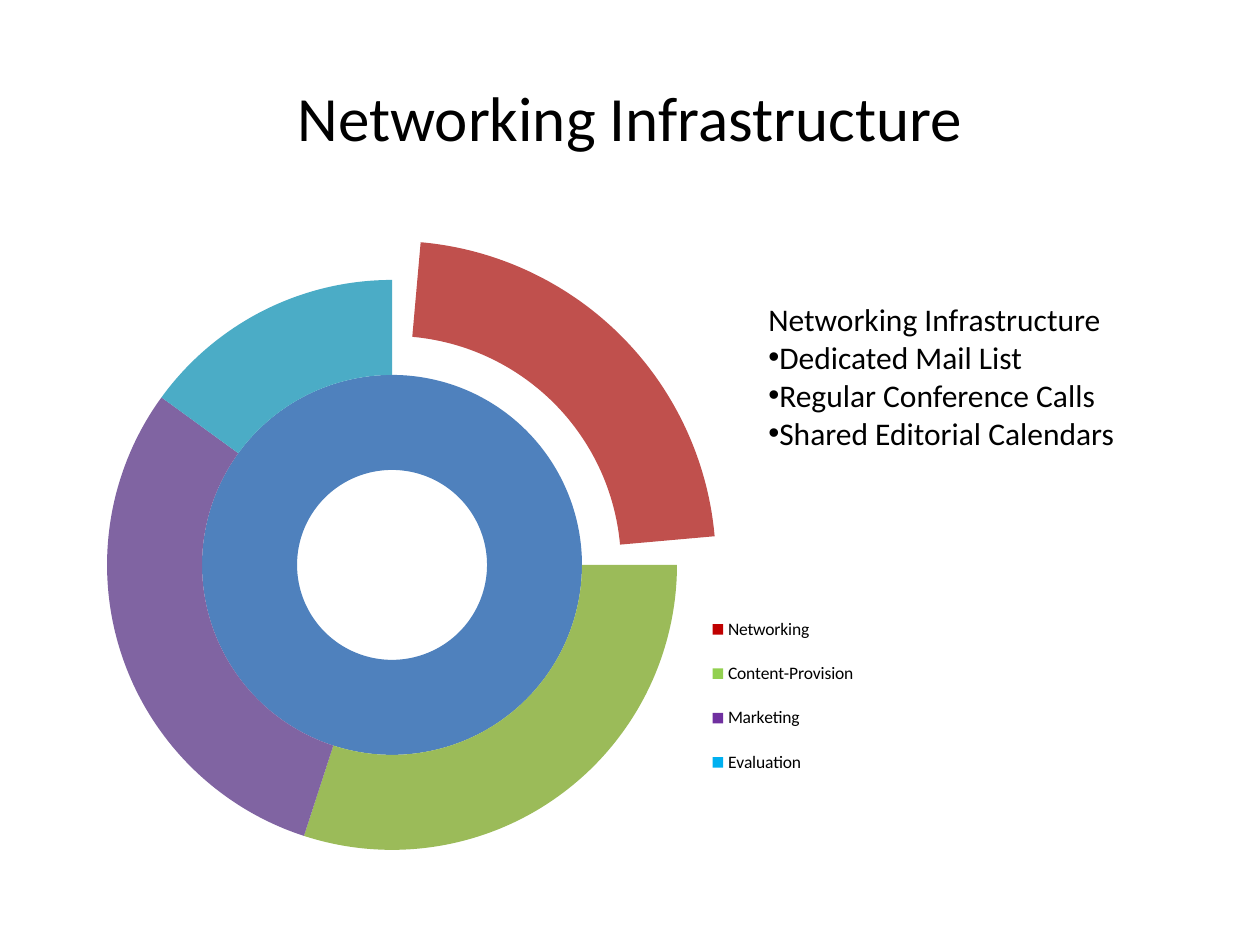
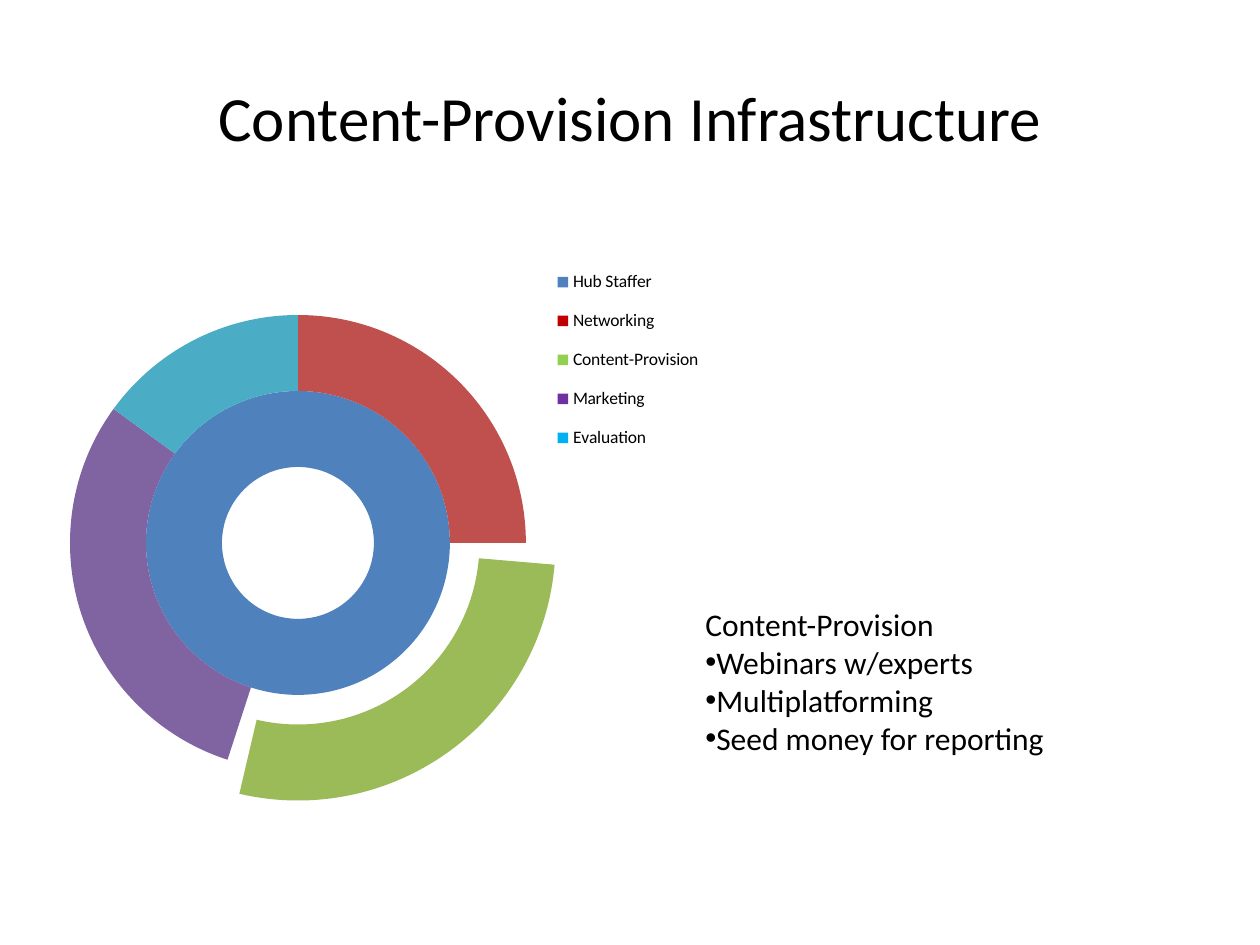
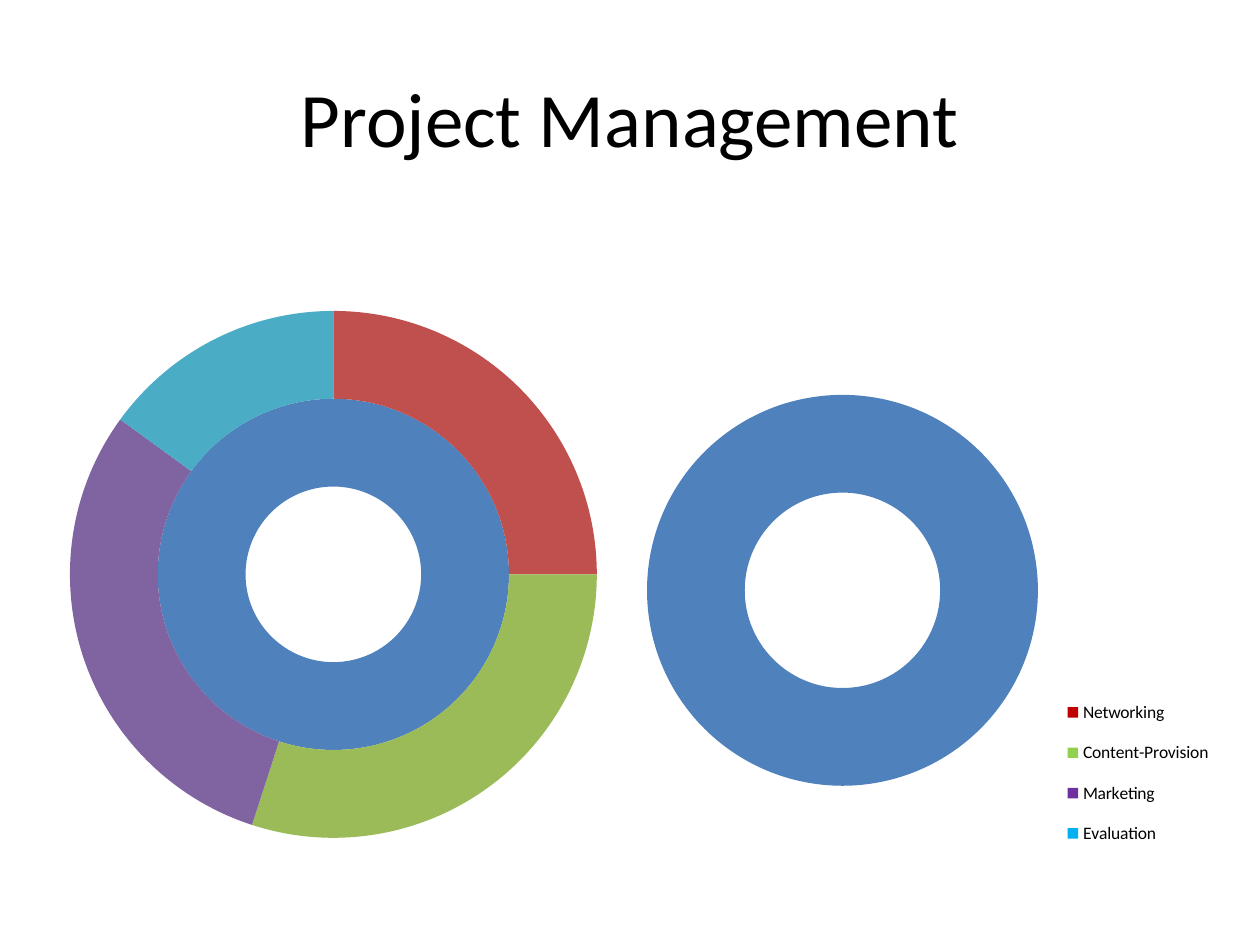
from lxml.etree import SubElement
from pptx import Presentation
from pptx.chart.data import CategoryChartData
from pptx.dml.color import RGBColor
from pptx.enum.chart import XL_CHART_TYPE, XL_LEGEND_POSITION
from pptx.enum.text import MSO_ANCHOR, MSO_AUTO_SIZE, PP_ALIGN
from pptx.oxml.ns import qn
from pptx.util import Inches, Pt

PIXELS_PER_INCH = 126
FONT = "Calibri"
BLACK = RGBColor(0x00, 0x00, 0x00)
BLUE = RGBColor(0x4F, 0x81, 0xBD)
HUB_COLORS = [BLUE, RGBColor(0xC0, 0x00, 0x00), RGBColor(0x92, 0xD0, 0x50),
              RGBColor(0x70, 0x30, 0xA0), RGBColor(0x00, 0xB0, 0xF0)]
AREA_COLORS = [BLUE, RGBColor(0xC0, 0x50, 0x4D), RGBColor(0x9B, 0xBB, 0x59),
               RGBColor(0x80, 0x64, 0xA2), RGBColor(0x4B, 0xAC, 0xC6)]

TITLE_BOX = (63, 38, 1134, 157)
ROLES = ["Hub Staffer", "Networking", "Content-Provision", "Marketing", "Evaluation"]
NUMBERS = ["1", "2", "3", "4", "5"]
HUB_RING = ("Series 1", [100, 0, 0, 0, 0], HUB_COLORS)
AREA_RING = ("Series 2", [None, 25, 30, 30, 15], AREA_COLORS)
BOTH_RINGS = [HUB_RING, AREA_RING]

SLIDES = [
    {"title": "Networking Infrastructure", "title_size": 36,
     "charts": [{"box": (94, 242, 809, 609), "circle": (107, 280, 570),
                 "categories": ROLES, "rings": BOTH_RINGS, "hole": 50,
                 "legend": (703, 595, 160, 202), "hide_hub": True,
                 "exploded": (1, 41)}],
     "note": {"box": (756, 294, 451, 165), "heading": "Networking Infrastructure",
              "bullets": ["Dedicated Mail List", "Regular Conference Calls",
                          "Shared Editorial Calendars"]}},
    {"title": "Content-Provision Infrastructure", "title_size": 36,
     "charts": [{"box": (53, 231, 667, 638), "circle": (70, 315, 456),
                 "categories": ROLES, "rings": BOTH_RINGS, "hole": 50,
                 "legend": (548, 253, 160, 214), "exploded": (2, 39)}],
     "note": {"box": (693, 599, 504, 165), "heading": "Content-Provision",
              "bullets": ["Webinars w/experts", "Multiplatforming",
                          "Seed money for reporting"]}},
    {"title": "Project Management", "title_size": 44,
     "charts": [{"box": (630, 315, 588, 552), "circle": (647, 395, 391),
                 "categories": ROLES, "rings": [HUB_RING], "hole": 70,
                 "legend": (1061, 682, 154, 182), "hide_hub": True},
                {"box": (0, 294, 667, 562), "circle": (70, 311, 527),
                 "categories": NUMBERS, "rings": BOTH_RINGS, "hole": 50}]},
]


def px(length):
    return Inches(length / PIXELS_PER_INCH)


def set_font(font, size):
    values = {"name": FONT, "size": Pt(size)}
    for name, value in values.items():
        setattr(font, name, value)
    font.color.rgb = BLACK


def place(shape, box):
    for name, length in zip(("left", "top", "width", "height"), box):
        setattr(shape, name, px(length))


def add_value(parent, tag, value):
    element = SubElement(parent, qn(tag))
    element.set("val", str(value))
    return element


def make_layout(parent, part_box, chart_box, inner=False):
    for old_layout in parent.findall(qn("c:layout")):
        parent.remove(old_layout)
    layout = SubElement(parent, qn("c:layout"))
    manual = SubElement(layout, qn("c:manualLayout"))
    if inner:
        add_value(manual, "c:layoutTarget", "inner")
    for axis in "xy":
        add_value(manual, f"c:{axis}Mode", "edge")
    left, top, width, height = part_box
    chart_left, chart_top, chart_width, chart_height = chart_box
    fractions = {"x": (left - chart_left) / chart_width,
                 "y": (top - chart_top) / chart_height,
                 "w": width / chart_width, "h": height / chart_height}
    for name, fraction in fractions.items():
        add_value(manual, f"c:{name}", round(fraction, 4))
    return layout


def add_legend(chart, content):
    chart.has_legend = True
    legend = chart.legend
    legend.position = XL_LEGEND_POSITION.RIGHT
    legend.include_in_layout = False
    set_font(legend.font, 10)
    element = legend._element
    position = element.find(qn("c:legendPos"))
    position.addnext(make_layout(element, content["legend"], content["box"]))
    if content.get("hide_hub"):
        entry = SubElement(element, qn("c:legendEntry"))
        add_value(entry, "c:idx", 0)
        add_value(entry, "c:delete", 1)
        position.addnext(entry)


def explode(series, index, percent):
    data_point = series._element.get_or_add_dPt_for_point(index)
    properties = data_point.find(qn("c:spPr"))
    properties.addprevious(add_value(data_point, "c:explosion", percent))


def add_doughnut(slide, content):
    data = CategoryChartData()
    data.categories = content["categories"]
    for name, values, colors in content["rings"]:
        data.add_series(name, values)
    frame = slide.shapes.add_chart(XL_CHART_TYPE.DOUGHNUT,
                                   *map(px, content["box"]), data)
    chart = frame.chart
    chart.has_title = False
    chart.has_legend = False
    set_font(chart.font, 10)
    plot = chart.plots[0]
    plot.vary_by_categories = True
    plot.has_data_labels = False
    plot._element.find(qn("c:holeSize")).set("val", str(content["hole"]))
    for series, (name, values, colors) in zip(plot.series, content["rings"]):
        for index, color in enumerate(colors):
            fill = series.points[index].format.fill
            fill.solid()
            fill.fore_color.rgb = color
    if "exploded" in content:
        explode(plot.series[1], *content["exploded"])
    left, top, diameter = content["circle"]
    plot_area = plot._element.getparent()
    circle_box = (left, top, diameter, diameter)
    plot_area.insert(0, make_layout(plot_area, circle_box, content["box"], inner=True))
    if "legend" in content:
        add_legend(chart, content)


def add_note(slide, content):
    frame = slide.shapes.add_textbox(*map(px, content["box"])).text_frame
    frame.word_wrap = True
    frame.auto_size = MSO_AUTO_SIZE.SHAPE_TO_FIT_TEXT
    frame.text = "\n".join([content["heading"], *content["bullets"]])
    for paragraph in frame.paragraphs:
        set_font(paragraph.runs[0].font, 18)
    for paragraph in frame.paragraphs[1:]:
        properties = paragraph._p.get_or_add_pPr()
        SubElement(properties, qn("a:buFont")).set("typeface", "Arial")
        SubElement(properties, qn("a:buChar")).set("char", "•")


def add_title(slide, text, size):
    title = slide.shapes.title
    place(title, TITLE_BOX)
    title.text_frame.text = text
    title.text_frame.vertical_anchor = MSO_ANCHOR.MIDDLE
    paragraph = title.text_frame.paragraphs[0]
    paragraph.alignment = PP_ALIGN.CENTER
    set_font(paragraph.runs[0].font, size)


def main():
    presentation = Presentation()
    presentation.slide_width = px(1260)
    presentation.slide_height = px(945)
    for content in SLIDES:
        slide = presentation.slides.add_slide(presentation.slide_layouts[5])
        add_title(slide, content["title"], content["title_size"])
        for chart_content in content["charts"]:
            add_doughnut(slide, chart_content)
        if "note" in content:
            add_note(slide, content["note"])
    presentation.save("out.pptx")


if __name__ == "__main__":
    main()
